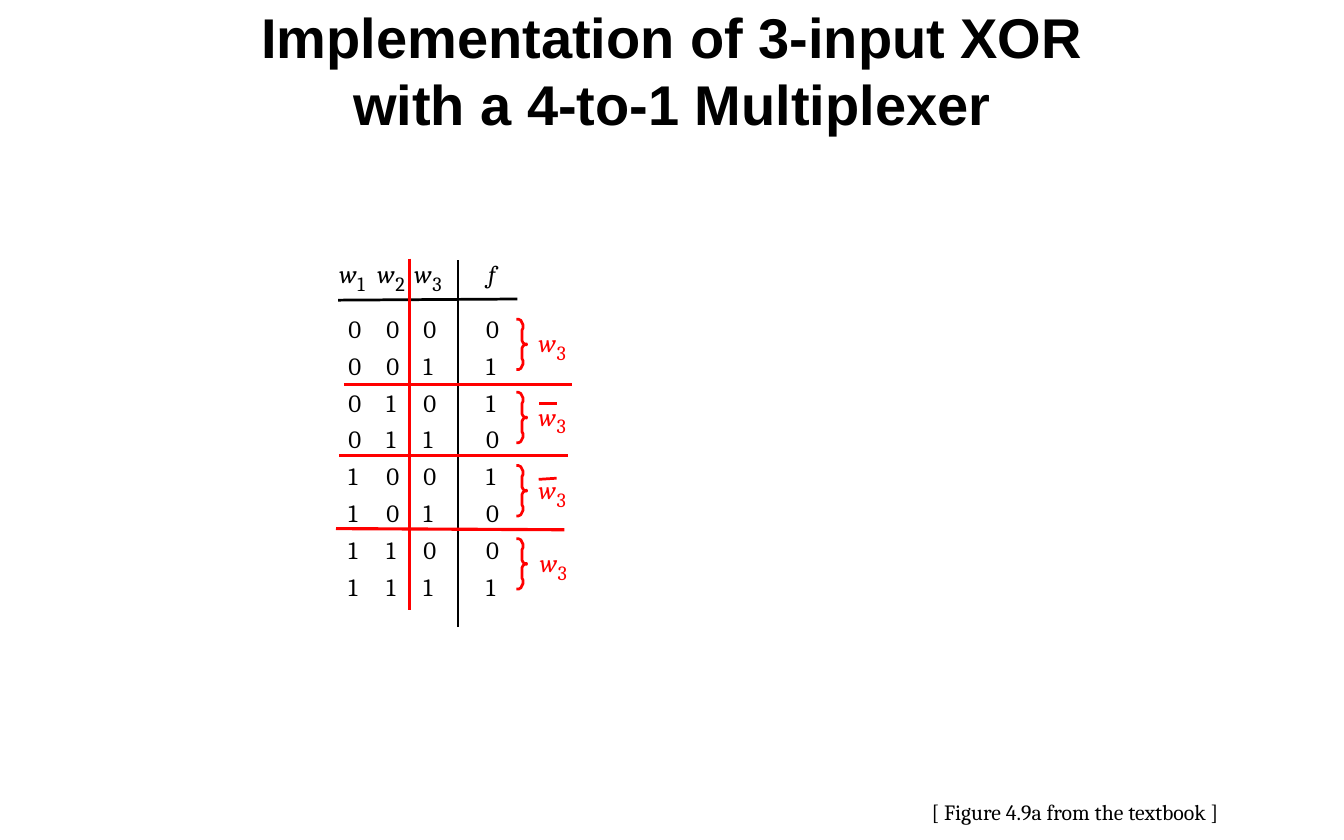
from pptx import Presentation
from pptx.dml.color import RGBColor
from pptx.enum.shapes import MSO_CONNECTOR
from pptx.enum.text import MSO_ANCHOR, MSO_AUTO_SIZE, PP_ALIGN
from pptx.oxml.ns import qn
from pptx.util import Inches, Pt
from lxml import etree

STRAIGHT = MSO_CONNECTOR.STRAIGHT
MIDDLE = MSO_ANCHOR.MIDDLE
FIT_SHAPE = MSO_AUTO_SIZE.SHAPE_TO_FIT_TEXT
NO_FIT = MSO_AUTO_SIZE.NONE
CENTER = PP_ALIGN.CENTER

BLACK = "000000"
RED = "FF0000"
COLUMN_LEFTS = (3.11, 3.45, 3.78, 4.34)
FIRST_ROW, LAST_ROW = 2.8, 5.1
FIRST_BRACE, LAST_BRACE = 2.85, 4.81
BRACE_LEFT, BRACE_HEIGHT = 4.61, 0.45
UPPER_BRACE = (
    (0, 0), (0.02, 0), (0.04, 0.01), (0.05, 0.03), (0.06, 0.05),
    (0.06, 0.08), (0.05, 0.1), (0.05, 0.14), (0.05, 0.19),
    (0.06, 0.21), (0.07, 0.22), (0.09, 0.23),
)


def color(hex_value):
    return RGBColor.from_string(hex_value)


def add_run(paragraph, text, size, hex_value, font="Cambria", italic=False, bold=False):
    run = paragraph.add_run()
    run.text = text
    run.font.name = font
    run.font.size = Pt(size)
    run.font.italic = italic
    run.font.bold = bold
    run.font.color.rgb = color(hex_value)


def add_text(slide, left, top, width, height, text, size, hex_value=BLACK, italic=False, inset=0):
    box = slide.shapes.add_textbox(Inches(left), Inches(top), Inches(width), Inches(height))
    frame = box.text_frame
    frame.word_wrap = False
    frame.auto_size = FIT_SHAPE
    frame.margin_left = frame.margin_right = Inches(inset)
    frame.margin_top = frame.margin_bottom = Inches(inset / 2)
    add_run(frame.paragraphs[0], text, size, hex_value, italic=italic)


def add_variable(slide, left, top, index, hex_value=BLACK):
    add_text(slide, left, top, 0.22, 0.27, "w", 16, hex_value, italic=True)
    add_text(slide, left + 0.16, top + 0.11, 0.14, 0.22, str(index), 13, hex_value)


def add_line(slide, start, end, hex_value, width=1.75):
    points = [Inches(value) for value in (*start, *end)]
    connector = slide.shapes.add_connector(STRAIGHT, *points)
    connector.line.color.rgb = color(hex_value)
    connector.line.width = Pt(width)
    etree.SubElement(connector._element.spPr, qn("a:effectLst"))


def add_brace(slide, top):
    lower = [(x, BRACE_HEIGHT - y) for x, y in reversed(UPPER_BRACE)]
    points = [
        (Inches(BRACE_LEFT + x), Inches(top + y)) for x, y in (*UPPER_BRACE, *lower)
    ]
    builder = slide.shapes.build_freeform(*points[0])
    builder.add_line_segments(points[1:], close=False)
    brace = builder.convert_to_shape()
    brace.fill.background()
    brace.line.color.rgb = color(RED)
    brace.line.width = Pt(1.75)
    brace.shadow.inherit = False


def add_title(slide):
    title = slide.shapes.title
    title.left, title.top = Inches(1), Inches(0)
    title.width, title.height = Inches(10), Inches(1.25)
    frame = title.text_frame
    frame.word_wrap = True
    frame.auto_size = NO_FIT
    frame.vertical_anchor = MIDDLE
    paragraph = frame.paragraphs[0]
    paragraph.alignment = CENTER
    add_run(paragraph, "Implementation of 3-input XOR", 36, BLACK, "Arial", bold=True)
    paragraph.add_line_break()
    add_run(paragraph, "with a 4-to-1 Multiplexer", 36, BLACK, "Arial", bold=True)


def add_truth_table(slide):
    add_line(slide, (4.62, 2.67), (3.02, 2.68), BLACK)
    add_line(slide, (4.09, 5.6), (4.09, 2.32), BLACK)
    for index, left in enumerate((3.03, 3.37, 3.7), start=1):
        add_variable(slide, left, 2.31, index)
    add_text(slide, 4.36, 2.31, 0.13, 0.27, "f", 16, italic=True)

    row_step = (LAST_ROW - FIRST_ROW) / 7
    for row in range(8):
        inputs = (row >> 2 & 1, row >> 1 & 1, row & 1)
        values = (*inputs, sum(inputs) % 2)
        for left, value in zip(COLUMN_LEFTS, values):
            add_text(slide, left, FIRST_ROW + row * row_step, 0.17, 0.27, str(value), 16)


def add_row_groups(slide):
    brace_step = (LAST_BRACE - FIRST_BRACE) / 3
    for group, left in enumerate((4.81, 4.81, 4.81, 4.82)):
        top = FIRST_BRACE + group * brace_step
        add_brace(slide, top)
        add_variable(slide, left, top + 0.08, 3, RED)
    add_line(slide, (4.97, 3.6), (4.81, 3.6), RED)
    add_line(slide, (4.97, 4.27), (4.81, 4.28), RED)

    add_line(slide, (3.66, 2.31), (3.66, 5.45), RED, 2)
    for left, start_y, end_y in ((3.07, 3.43, 3.43), (3.03, 4.07, 4.07), (3, 4.72, 4.73)):
        add_line(slide, (left, start_y), (left + 2.04, end_y), RED, 2)


def main():
    presentation = Presentation()
    presentation.slide_width = Inches(12)
    presentation.slide_height = Inches(7.5)
    slide = presentation.slides.add_slide(presentation.slide_layouts[5])
    add_title(slide)
    add_truth_table(slide)
    add_row_groups(slide)
    add_text(slide, 8.22, 7.08, 2.78, 0.34, "[ Figure 4.9a from the textbook ]", 14, inset=0.1)
    presentation.save("out.pptx")


if __name__ == "__main__":
    main()
